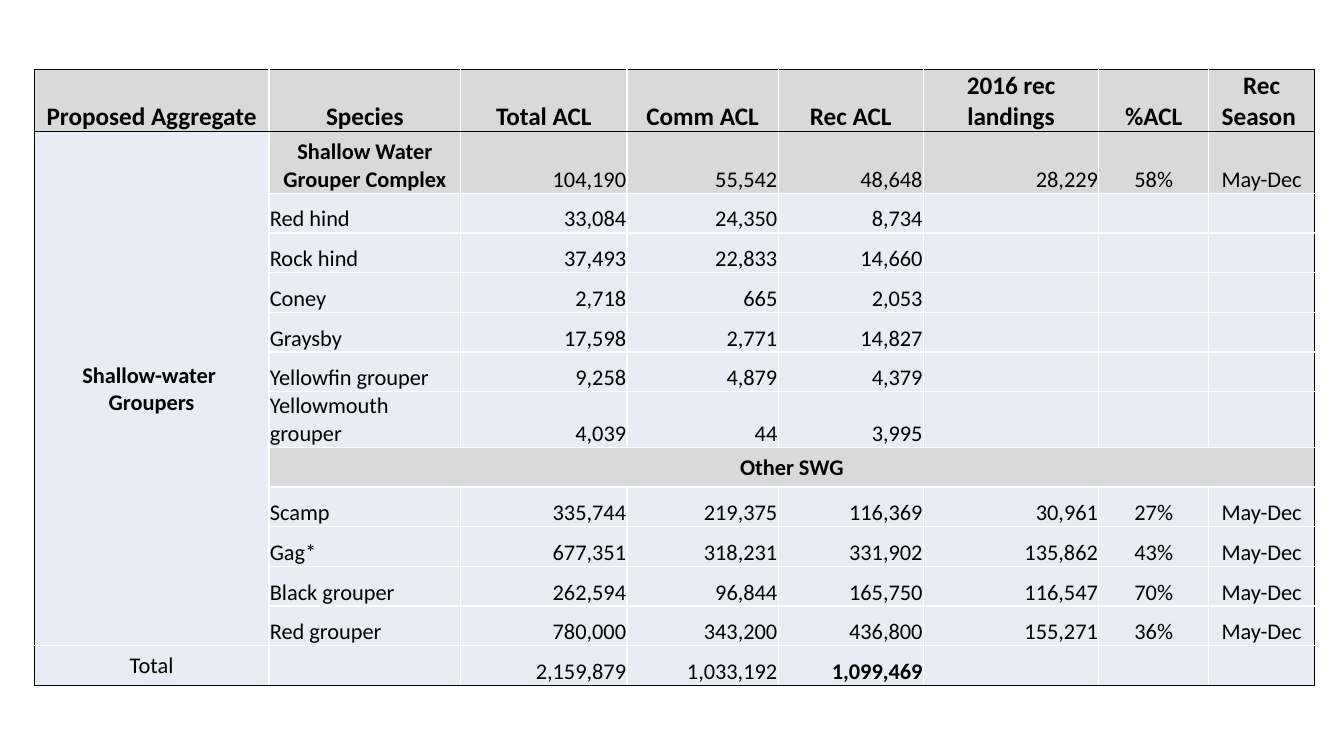
"""Builds a slide with a table of catch limits for shallow-water groupers."""
from lxml import etree
from pptx import Presentation, util as u
from pptx.dml.color import RGBColor
from pptx.enum import text
from pptx.oxml.ns import qn

THEME = {
    "font": "Calibri", "head": 18, "body": 16,
    "ink": "000000", "rule": "FFFFFF", "band": "D9D9D9", "pale": "E9EBF5",
}
HEAD = ["Proposed Aggregate", "Species", "Total ACL", "Comm ACL", "Rec ACL",
        "2016 rec landings", "%ACL", "Rec Season "]
GROUP = "Shallow-water \nGroupers"
BODY = [
    ["Shallow Water Grouper Complex", "104,190", "55,542", "48,648", "28,229", "58%", "May-Dec"],
    ["Red hind", "33,084", "24,350", "8,734"],
    ["Rock hind", "37,493", "22,833", "14,660"],
    ["Coney", "2,718", "665", "2,053"],
    ["Graysby", "17,598", "2,771", "14,827"],
    ["Yellowfin grouper", "9,258", "4,879", "4,379"],
    ["Yellowmouth grouper", "4,039", "44", "3,995"],
    ["Other SWG"],
    ["Scamp", "335,744", "219,375", "116,369", "30,961", "27%", "May-Dec"],
    ["Gag*", "677,351", "318,231", "331,902", "135,862", "43%", "May-Dec"],
    ["Black grouper", "262,594", "96,844", "165,750", "116,547", "70%", "May-Dec"],
    ["Red grouper", "780,000", "343,200", "436,800", "155,271", "36%", "May-Dec"],
]
TOTAL = ["Total", "", "2,159,879", "1,033,192", "1,099,469"]
WIDTHS = [5.92, 4.83, 4.19, 3.81, 3.66, 4.42, 2.77, 2.67]
LEFT, TOP, ROW, TALL = 0.86, 1.75, 1.0, 1.55

ROWS = [HEAD] + [[GROUP if i == 0 else ""] + row for i, row in enumerate(BODY)] + [TOTAL]
LAST, END = len(ROWS) - 1, len(HEAD) - 1
COMPLEX, OTHER = 1, 8
BANDS = (0, COMPLEX, OTHER)
BOLD = {(COMPLEX, 0), (COMPLEX, 1), (OTHER, 1), (LAST, 4)}
MIDDLE = {(COMPLEX, 0), (OTHER, 1), (LAST, 0)}
ALIGN = text.PP_ALIGN


def align(r, c):
    """Returns the alignment of the text at a row and column."""
    if r in (0, OTHER) or c in (0, 6, 7) or (r, c) == (COMPLEX, 1):
        return ALIGN.CENTER
    return ALIGN.LEFT if c == 1 else ALIGN.RIGHT


def border(cell, r, c):
    """Draws dark rules round the table and under its head, pale ones elsewhere."""
    right = c + cell.span_width - 1 if cell.is_merge_origin else c
    dark = {"lnL": c == 0, "lnR": right == END,
            "lnT": r in (0, 1), "lnB": r in (0, LAST)}
    props = cell._tc.get_or_add_tcPr()
    for i, (tag, on) in enumerate(dark.items()):
        line = etree.Element(qn("a:" + tag), w=str(u.Pt(1)))
        fill = etree.SubElement(line, qn("a:solidFill"))
        etree.SubElement(fill, qn("a:srgbClr"), val=THEME["ink" if on else "rule"])
        props.insert(i, line)


def style(cell, r, c, words):
    """Fills one cell with its text, colours and rules."""
    cell.margin_left = cell.margin_right = cell.margin_top = u.Cm(0.02)
    cell.margin_bottom = 0
    anchor = text.MSO_ANCHOR
    cell.vertical_anchor = anchor.MIDDLE if (r, c) in MIDDLE else anchor.BOTTOM
    cell.fill.solid()
    band = r in BANDS and (r == 0 or c > 0)
    cell.fill.fore_color.rgb = RGBColor.from_string(THEME["band" if band else "pale"])
    border(cell, r, c)
    cell.text = words
    for para in cell.text_frame.paragraphs:
        para.alignment = align(r, c)
        font = para.font
        font.name = THEME["font"]
        font.size = u.Pt(THEME["body" if r else "head"])
        font.bold = r == 0 or (r, c) in BOLD
        font.color.rgb = RGBColor.from_string(THEME["ink"])


def main():
    """Lays out the table and saves the deck."""
    deck = Presentation()
    deck.slide_width, deck.slide_height = u.Cm(33.87), u.Cm(19.05)
    slide = deck.slides.add_slide(deck.slide_layouts[6])
    tall = [TALL if r == COMPLEX else ROW for r in range(len(ROWS))]
    frame = slide.shapes.add_table(len(ROWS), len(HEAD), u.Cm(LEFT), u.Cm(TOP),
                                   u.Cm(sum(WIDTHS)), u.Cm(sum(tall)))
    table = frame.table
    table.first_row = table.horz_banding = False
    for col, wide in zip(table.columns, WIDTHS):
        col.width = u.Cm(wide)
    for row, high in zip(table.rows, tall):
        row.height = u.Cm(high)
    table.cell(COMPLEX, 0).merge(table.cell(LAST - 1, 0))
    table.cell(OTHER, 1).merge(table.cell(OTHER, END))
    for r, row in enumerate(ROWS):
        for c in range(len(HEAD)):
            style(table.cell(r, c), r, c, row[c] if c < len(row) else "")
    deck.save("out.pptx")


if __name__ == "__main__":
    main()
